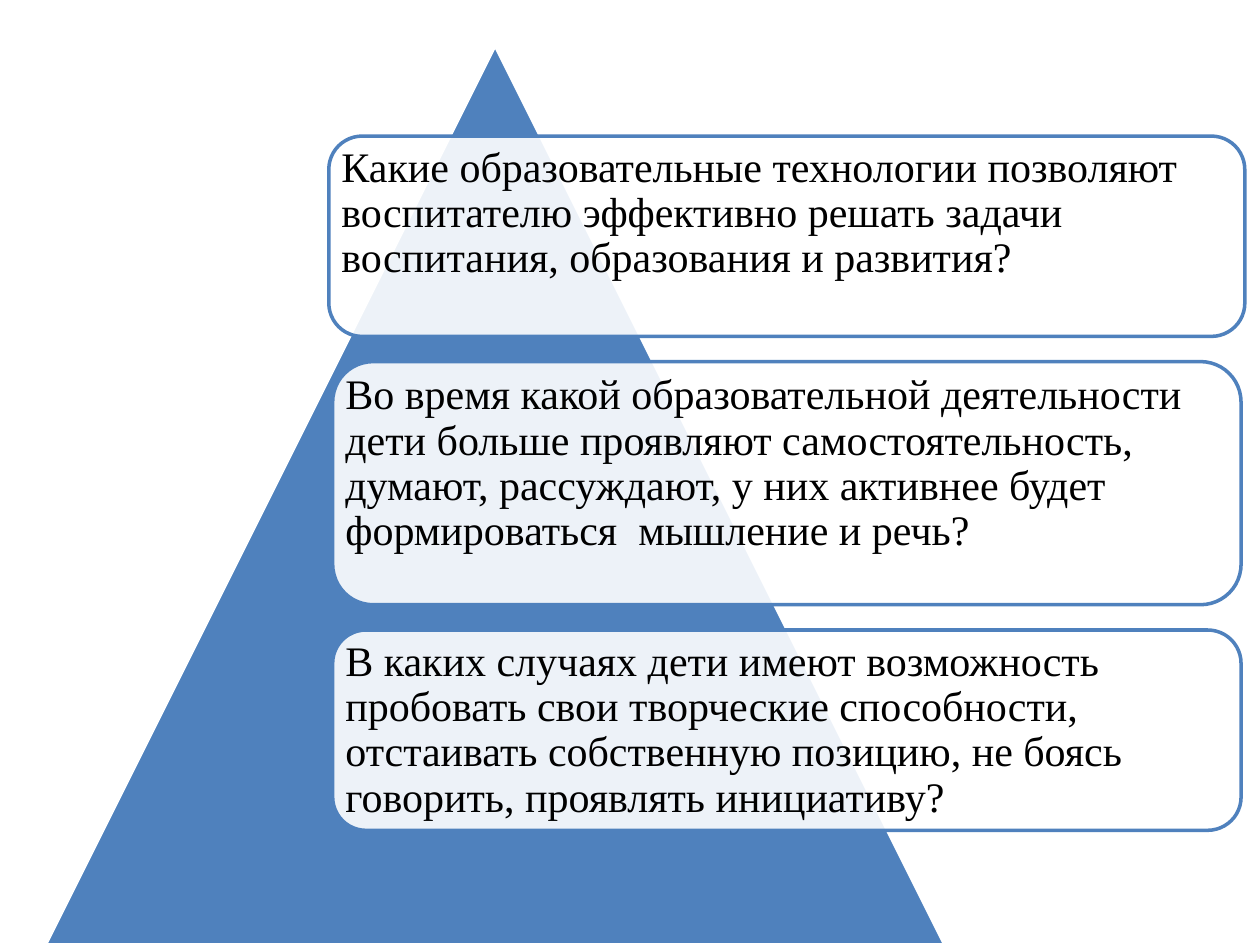
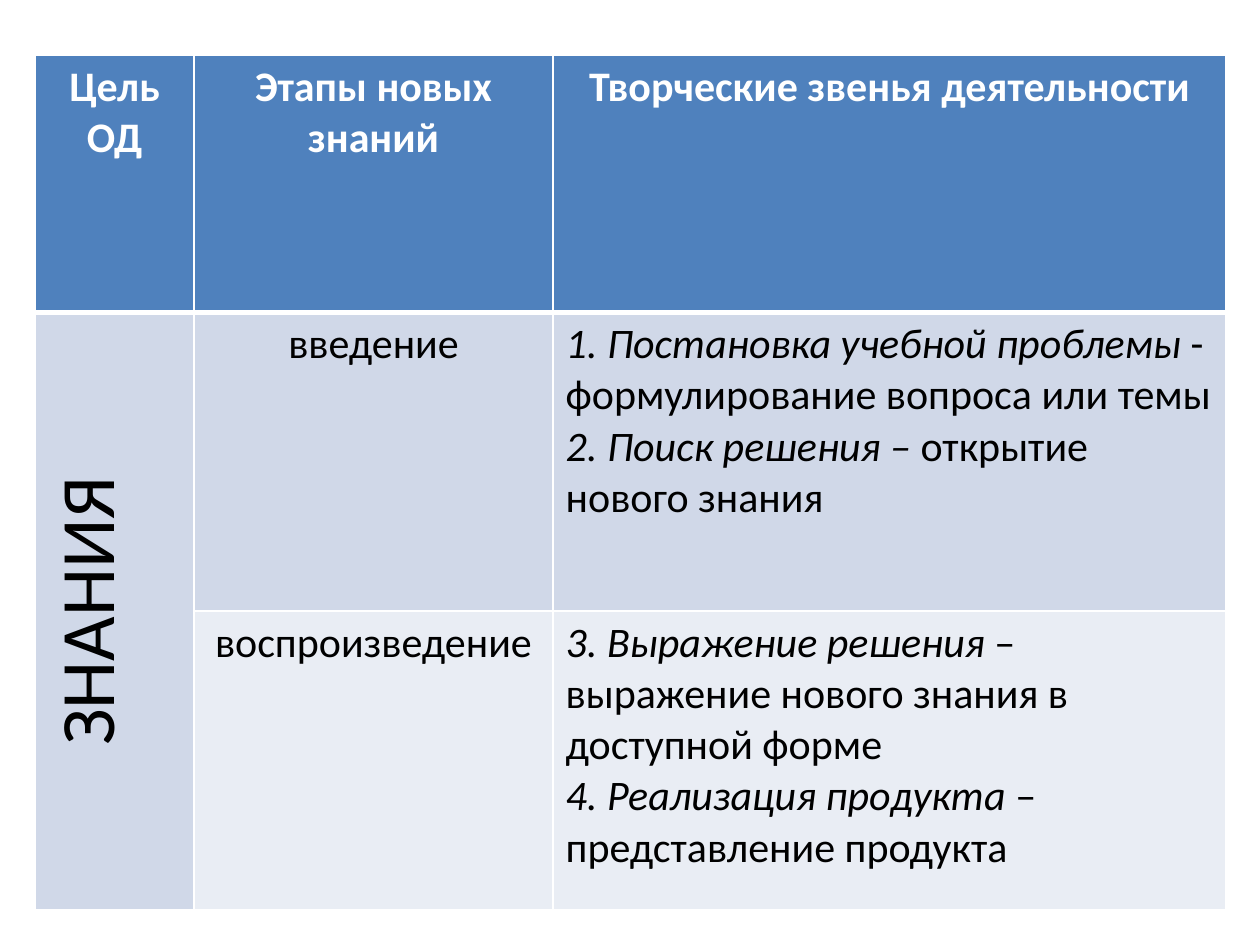
from collections import namedtuple

from lxml.etree import SubElement
from pptx import Presentation
from pptx.dml.color import RGBColor
from pptx.enum.shapes import MSO_SHAPE as Shape
from pptx.enum.text import MSO_ANCHOR as Anchor, PP_ALIGN as Align
from pptx.oxml.ns import qn
from pptx.util import Inches, Pt

COLUMNS, ROWS = 100, 75
UNIT = Inches(0.1)
Box = namedtuple("Box", "left top width height")

BLUE = RGBColor(0x4F, 0x81, 0xBD)
PALE_BLUE = RGBColor(0xD0, 0xD8, 0xE8)
PALEST_BLUE = RGBColor(0xE9, 0xED, 0xF4)
WHITE = RGBColor(0xFF, 0xFF, 0xFF)
BLACK = RGBColor(0x00, 0x00, 0x00)

QUESTION = {"name": "Times New Roman", "size": Pt(24)}
BODY = {"name": "Calibri", "size": Pt(24), "bold": False}
HEADER = {**BODY, "bold": True}
GOAL = {**BODY, "size": Pt(44)}

# Share of the short side that a rounded corner takes from the text area
CORNER_INSET = 0.29 / 6
TEXT_INSET = 1
PANEL_GAP = 2

# Width and height of each panel, then its question
QUESTIONS = [
    (72.7, 15.9, "Какие образовательные технологии позволяют воспитателю эффективно "
                 "решать задачи воспитания, образования и развития?"),
    (72.1, 19.3, "Во время какой образовательной деятельности дети больше проявляют "
                 "самостоятельность, думают, рассуждают, у них активнее будет "
                 "формироваться  мышление и речь?"),
    (72.1, 15.9, "В каких случаях дети имеют возможность пробовать свои творческие "
                 "способности, отстаивать собственную позицию, не боясь говорить, "
                 "проявлять инициативу?"),
]

HEADINGS = ["Цель ОД", "Этапы новых знаний", "Творческие звенья деятельности"]
STAGES = [
    ("введение", PALE_BLUE, [
        ("1. Постановка учебной проблемы ", "- формулирование вопроса или темы"),
        ("2. Поиск решения – ", "открытие нового знания")]),
    ("воспроизведение", PALEST_BLUE, [
        ("3. Выражение решения ", "– выражение нового знания в доступной форме"),
        ("4. Реализация продукта ", "– представление продукта")]),
]


def units(*counts):
    return [round(count * UNIT) for count in counts]


def style(font, formats, color):
    for name, value in formats.items():
        setattr(font, name, value)
    font.color.rgb = color


def add_figure(page, kind, box, fill, line):
    figure = page.shapes.add_shape(kind, *units(*box))
    figure.shadow.inherit = False
    figure.fill.solid()
    figure.fill.fore_color.rgb = fill
    figure.line.color.rgb = line
    figure.line.width = Pt(2)
    return figure


def set_opacity(figure, percent):
    color = figure._element.spPr.find(qn("a:solidFill"))[0]
    SubElement(color, qn("a:alpha")).set("val", str(percent * 1000))


def add_question(page, box, question):
    panel = add_figure(page, Shape.ROUNDED_RECTANGLE, box, WHITE, BLUE)
    set_opacity(panel, 90)
    frame = panel.text_frame
    frame.word_wrap = True
    frame.vertical_anchor = Anchor.TOP
    side, = units(TEXT_INSET - CORNER_INSET * box.height)
    frame.margin_left = frame.margin_right = side
    frame.margin_top = frame.margin_bottom = 0
    para = frame.paragraphs[0]
    para.text = question
    para.alignment = Align.LEFT
    para.line_spacing = 0.9
    style(para.font, QUESTION, BLACK)


def build_pyramid(page, box):
    add_figure(page, Shape.ISOSCELES_TRIANGLE, box, BLUE, WHITE)
    center = box.left + 58.85
    top = box.top + 7.2
    for width, height, question in QUESTIONS:
        add_question(page, Box(center - width / 2, top, width, height), question)
        top += height + PANEL_GAP


def paint_cell(cell, fill, bottom_width=1):
    """Draw white borders first, as the schema wants them before the fill."""
    properties = cell._tc.get_or_add_tcPr()
    for side, width in zip("LRTB", (1, 1, 1, bottom_width)):
        border = SubElement(properties, qn(f"a:ln{side}"), w=str(Pt(width)))
        solid = SubElement(border, qn("a:solidFill"))
        SubElement(solid, qn("a:srgbClr"), val=str(WHITE))
    cell.fill.solid()
    cell.fill.fore_color.rgb = fill


def write_centered(cell, text, formats, color):
    para = cell.text_frame.paragraphs[0]
    para.alignment = Align.CENTER
    span = para.add_run()
    span.text = text
    style(span.font, formats, color)


def write_steps(cell, steps):
    frame = cell.text_frame
    for index, step in enumerate(steps):
        para = frame.add_paragraph() if index else frame.paragraphs[0]
        for text, italic in zip(step, (True, False)):
            span = para.add_run()
            span.text = text
            style(span.font, {**BODY, "italic": italic}, BLACK)


def build_stage_table(page, box):
    table = page.shapes.add_table(len(STAGES) + 1, len(HEADINGS), *units(*box)).table
    table.first_row = table.horz_banding = False
    for column, width in zip(table.columns, units(12.6, 28.5, 53.4)):
        column.width = width
    for row, height in zip(table.rows, units(20.4, 23.7, 23.7)):
        row.height = height

    for index, heading in enumerate(HEADINGS):
        cell = table.cell(0, index)
        paint_cell(cell, BLUE, bottom_width=3)
        write_centered(cell, heading, HEADER, WHITE)

    goal = table.cell(1, 0)
    goal.merge(table.cell(len(STAGES), 0))
    write_centered(goal, "ЗНАНИЯ", GOAL, BLACK)
    goal._tc.get_or_add_tcPr().set("vert", "vert270")

    for index, (stage, fill, steps) in enumerate(STAGES, start=1):
        goal_part, stage_cell, steps_cell = table.rows[index].cells
        paint_cell(goal_part, PALE_BLUE)
        for cell in (stage_cell, steps_cell):
            paint_cell(cell, fill)
        write_centered(stage_cell, stage, BODY, BLACK)
        write_steps(steps_cell, steps)


def main():
    deck = Presentation()
    deck.slide_width, deck.slide_height = units(COLUMNS, ROWS)
    blank = deck.slide_layouts[6]
    build_pyramid(deck.slides.add_slide(blank), Box(3.6, 3.6, 71.4, 71.4))
    build_stage_table(deck.slides.add_slide(blank), Box(2.8, 4.4, 94.5, 67.8))
    deck.save("out.pptx")


if __name__ == "__main__":
    main()
